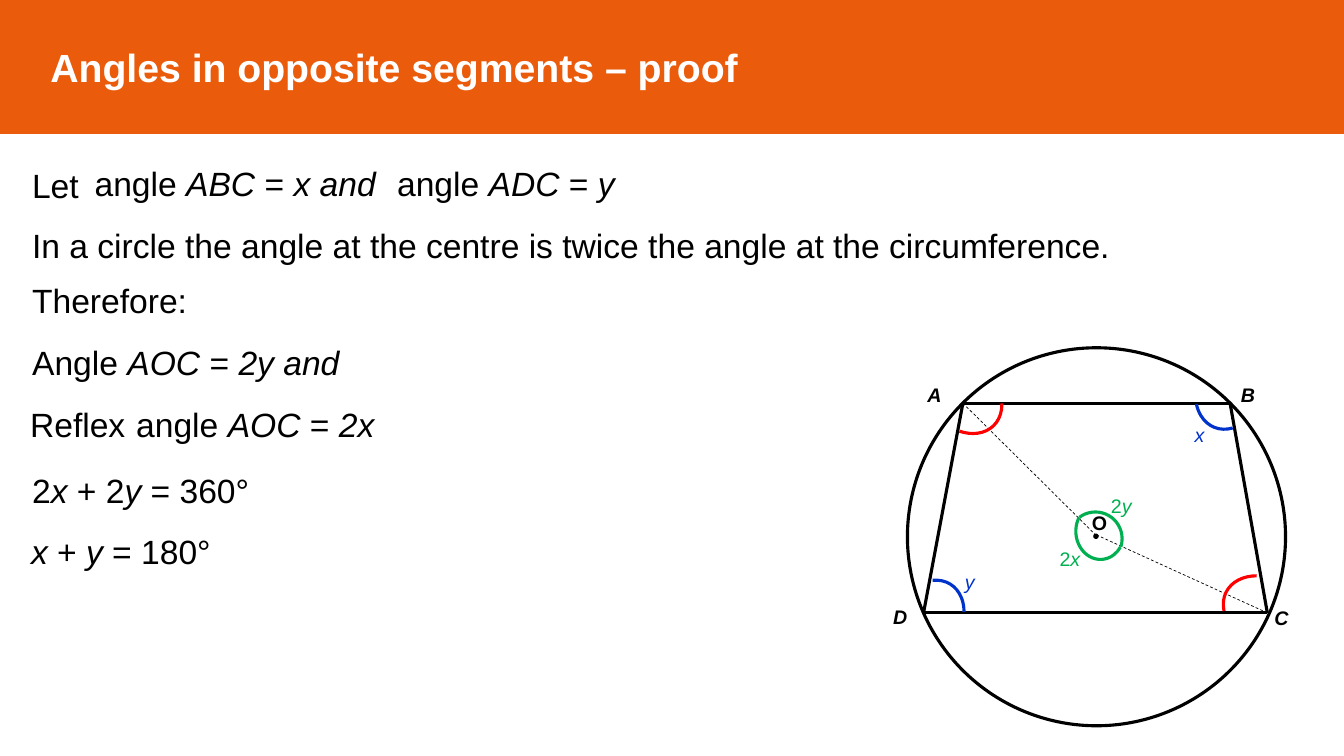
from lxml import etree
from pptx import Presentation
from pptx.dml.color import RGBColor
from pptx.enum.dml import MSO_LINE_DASH_STYLE as DASH
from pptx.enum.shapes import MSO_CONNECTOR, MSO_SHAPE
from pptx.enum.text import MSO_ANCHOR
from pptx.oxml.ns import qn
from pptx.util import Inches, Pt

COLORS = {"orange": "EA5B0C", "white": "FFFFFF", "black": "000000",
          "blue": "0033CC", "red": "FF0000", "green": "00B050"}
RGB = {name: RGBColor.from_string(value) for name, value in COLORS.items()}

prs = Presentation()
prs.slide_width, prs.slide_height = Inches(13.33), Inches(7.5)
s = prs.slides.add_slide(prs.slide_layouts[6])


def add_text(shapes, box, runs, size, color="black", bold=False, spacing=None):
    """Add a text box; each run is (text, italic) or (text, italic, size)."""
    tf = shapes.add_textbox(*map(Inches, box)).text_frame
    tf.word_wrap = True
    p = tf.paragraphs[0]
    p.line_spacing = spacing
    for text, italic, *own_size in runs:
        r = p.add_run()
        r.text = text
        r.font.name, r.font.bold, r.font.italic = "Arial", bold, italic
        r.font.size = Pt(own_size[0] if own_size else size)
        r.font.color.rgb = RGB[color]


def add_outline(shapes, kind, box, color, width, fill=None):
    """Add a shape with a coloured line and an optional fill."""
    sp = shapes.add_shape(kind, *map(Inches, box))
    sp.shadow.inherit = False
    sp.line.color.rgb, sp.line.width = RGB[color], Pt(width)
    if fill:
        sp.fill.solid()
        sp.fill.fore_color.rgb = RGB[fill]
    else:
        sp.fill.background()
    return sp


# Title band
band = add_outline(s.shapes, MSO_SHAPE.RECTANGLE, (0, 0, 13.33, 1.32), "orange", 1, "orange")
tf = band.text_frame
tf.vertical_anchor = MSO_ANCHOR.MIDDLE
tf.margin_left = Inches(0.5)
p = tf.paragraphs[0]
p.alignment = 1
r = p.add_run()
r.text = "Angles in opposite segments – proof"
r.font.name, r.font.size, r.font.bold = "Arial", Pt(28), True
r.font.color.rgb = RGB["white"]

# Circle and centre point
diagram = s.shapes.add_group_shape().shapes
add_outline(diagram, MSO_SHAPE.OVAL, (9, 3.45, 3.75, 3.75), "black", 2.25)
add_outline(diagram, MSO_SHAPE.OVAL, (10.85, 5.3, 0.04, 0.04), "black", 1, "black")

# Quadrilateral sides and dashed radii
A, B, C, D, O = (9.55, 4), (12.2, 4), (12.57, 6.08), (9.16, 6.08), (10.86, 5.3)
sides = [(A, B), (D, C), (A, D), (B, C)]
radii = [(A, O), (C, O)]
for start, end in sides + radii:
    line = diagram.add_connector(MSO_CONNECTOR.STRAIGHT, *map(Inches, start + end))
    line.line.color.rgb = RGB["black"]
    line.line.width = Pt(2.25)
    if (start, end) in radii:
        line.line.width = Pt(0.5)
        line.line.dash_style = DASH.DASH
    etree.SubElement(line._element.spPr, qn("a:effectLst"))

# Point names
for name, x, y in [("O", 10.73, 5.02), ("A", 9.1, 3.75), ("B", 12.21, 3.75),
                   ("C", 12.54, 5.96), ("D", 8.76, 5.95)]:
    add_text(diagram, (x, y, 0.38, 0.34), [(name, name != "O")], 14, bold=True)

# Angle arcs: box, rotation, start and end adjustments, colour
for box, rotation, start, end, color in [
    ((11.87, 3.39, 0.67, 0.88), 201, 147.67, 186.77, "blue"),
    ((8.86, 5.73, 0.67, 0.88), 31.4, 147.67, 188.13, "blue"),
    ((9.21, 3.47, 0.67, 0.88), 135.1, 142.93, 191.76, "red"),
    ((12.22, 5.63, 0.67, 0.88), 296.1, 147, 191.76, "red"),
    ((10.6, 5.08, 0.53, 0.53), 0, 139.85, 10.61, "green"),
    ((10.67, 5, 0.48, 0.55), 176, 132.54, 22.68, "green"),
]:
    arc = add_outline(s.shapes, MSO_SHAPE.ARC, box, color, 2.25)
    arc.rotation = rotation
    arc.adjustments[0], arc.adjustments[1] = start, end

# Angle values
for x, y, runs, color in [
    (11.75, 4.15, [("x", True)], "blue"),
    (9.47, 5.61, [("y", True)], "blue"),
    (10.92, 4.85, [("2", False), ("y", True)], "green"),
    (10.41, 5.38, [("2", False), ("x", True)], "green"),
]:
    add_text(s.shapes, (x, y, 0.45, 0.34), runs, 14, color)

# Proof: left, top, width, line spacing, runs
for x, y, width, spacing, runs in [
    (0.22, 1.51, 0.8, 1.2, [("Let", False)]),
    (0.84, 1.57, 5.71, None, [
        ("angle ", False), ("ABC ", True), ("=", False), (" x and", True),
        ("\tangle ", False), ("ADC ", True), ("=", False), (" y", True)]),
    (0.22, 2.1, 11.36, 1.2, [
        ("In a circle the angle at the centre is twice the angle at the circumference.", False)]),
    (0.22, 2.73, 1.9, None, [("Therefore:", False)]),
    (0.22, 3.34, 3.59, None, [
        ("Angle ", False), ("AOC ", True), ("=", False), (" 2y and", True)]),
    (0.2, 3.9, 4.06, None, [
        ("Reflex", False), (" ", False, 28), ("angle ", False),
        ("AOC ", True), ("=", False), (" 2x", True)]),
    (0.22, 4.61, 2.5, None, [
        ("2", False), ("x", True), (" + 2", False), ("y", True), (" = 360°", False)]),
    (0.21, 5.22, 2.1, None, [
        ("x", True), (" + ", False), ("y", True), (" = 180°", False)]),
]:
    add_text(s.shapes, (x, y, width, 0.5), runs, 24, spacing=spacing)

prs.save("out.pptx")
